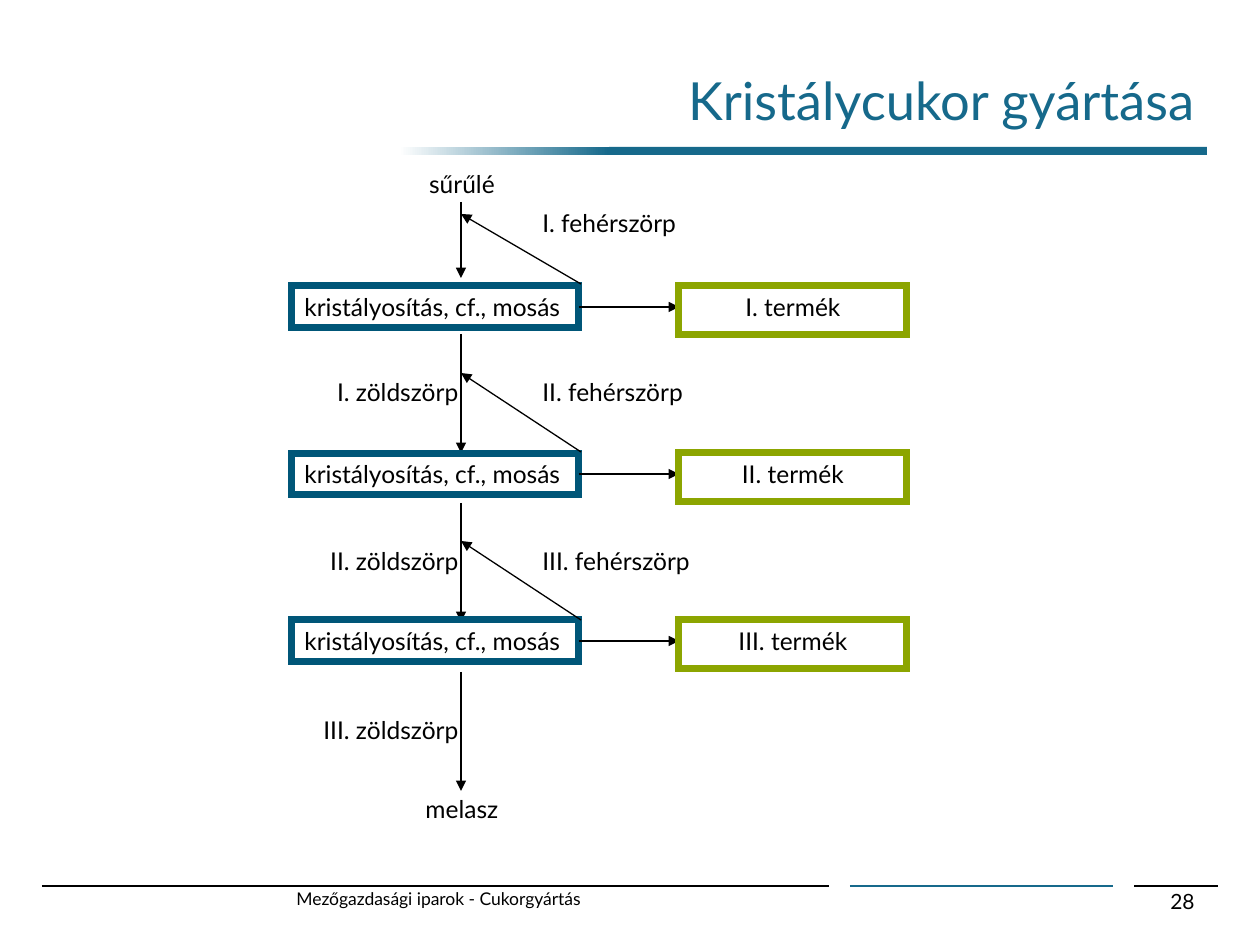
from lxml import etree
from pptx import Presentation
from pptx import util as u
from pptx.dml.color import RGBColor
from pptx.enum import shapes, text
from pptx.oxml.ns import qn

FONT = "Lato"
BLACK = RGBColor(0x00, 0x00, 0x00)
WHITE = RGBColor(0xFF, 0xFF, 0xFF)
TEAL = RGBColor(0x16, 0x69, 0x8B)
NAVY = RGBColor(0x00, 0x56, 0x78)
GREEN = RGBColor(0x8C, 0xA5, 0x00)
LEFT, CENTER, RIGHT = text.PP_ALIGN.LEFT, text.PP_ALIGN.CENTER, text.PP_ALIGN.RIGHT
NUMERALS = ["I.", "II.", "III."]


def px(n):
    """Lengths are in px, 126 to the inch."""
    return u.Emu(round(n * 914400 / 126))


def write(shape, words, size, align=LEFT, color=BLACK, anchor=text.MSO_ANCHOR.TOP):
    frame = shape.text_frame
    frame.text = words
    frame.word_wrap = True
    frame.vertical_anchor = anchor
    paragraph = frame.paragraphs[0]
    paragraph.alignment = align
    font = paragraph.runs[0].font
    font.name, font.size, font.color.rgb = FONT, u.Pt(size), color


def add_label(slide, x, y, w, h, words, size=14, align=LEFT):
    label = slide.shapes.add_textbox(px(x), px(y), px(w), px(h))
    write(label, words, size, align)


def add_line(slide, x1, y1, x2, y2, color=BLACK, width=0.75, arrow=True):
    line = slide.shapes.add_connector(
        shapes.MSO_CONNECTOR.STRAIGHT, px(x1), px(y1), px(x2), px(y2))
    line.line.color.rgb = color
    line.line.width = u.Pt(width)
    properties = line._element.spPr
    if arrow:
        etree.SubElement(properties.find(qn("a:ln")), qn("a:tailEnd"), type="triangle")
    etree.SubElement(properties, qn("a:effectLst"))
    return line


def add_box(slide, x, y, w, h, words, border, align):
    box = slide.shapes.add_shape(
        shapes.MSO_SHAPE.RECTANGLE, px(x), px(y), px(w), px(h))
    box.shadow.inherit = False
    box.fill.background()
    box.line.color.rgb = border
    box.line.width = u.Pt(4)
    etree.SubElement(box._element.spPr.find(qn("a:ln")), qn("a:miter"), lim="800000")
    write(box, words, 14, align)
    return box


def add_bar(slide, x, y, w, h, fade=False):
    bar = slide.shapes.add_shape(
        shapes.MSO_SHAPE.RECTANGLE, px(x), px(y), px(w), px(h))
    bar.shadow.inherit = False
    bar.line.fill.background()
    if fade:
        bar.fill.gradient()
        bar.fill.gradient_angle = 0
        for stop, color in zip(bar.fill.gradient_stops, (WHITE, TEAL)):
            stop.color.rgb = color
    else:
        bar.fill.solid()
        bar.fill.fore_color.rgb = TEAL


def add_header(slide, x, y, w, h):
    # Underline fading in from the left
    add_bar(slide, x + 53, y + 105, 210, 8, fade=True)
    add_bar(slide, x + 263, y + 105, w - 263, 8)
    title = slide.shapes.title
    title.left, title.top, title.width, title.height = px(x), px(y), px(w), px(h)
    write(title, "Kristálycukor gyártása", 30, RIGHT, TEAL, text.MSO_ANCHOR.MIDDLE)


def add_footer(slide, x, y):
    for start, end, color in ((0, 787, BLACK), (1092, 1176, BLACK), (808, 1071, TEAL)):
        add_line(slide, x + start, y, x + end, y, color, 1.5, arrow=False)
    add_label(slide, x + 242, y - 4, 588, 42, "Mezőgazdasági iparok - Cukorgyártás", 10)
    add_label(slide, x + 976, y - 4, 189, 42, "28", 12, RIGHT)


def add_stage(slide, x, y, numeral):
    """One crystallisation step, its product and the white syrup led back."""
    step = add_box(slide, x, y, 287, 42, "kristályosítás, cf., mosás", NAVY, LEFT)
    to_product = add_line(slide, x + 287, y + 21, x + 387, y + 21)
    to_product.begin_connect(step, 3)
    add_box(slide, x + 387, y, 228, 49, f"{numeral} termék", GREEN, CENTER)


def add_flow(slide, x, y):
    stem = x + 169
    add_label(slide, stem - 49, y, 100, 42, "sűrűlé", align=CENTER)
    add_line(slide, stem, y + 39, stem, y + 115)
    for i, numeral in enumerate(NUMERALS):
        add_stage(slide, x, y + 123 + 167 * i, numeral)
        # White syrup returns to the inflow above the step
        return_start = y + 121 + 168 * i
        rise = 70 if i == 0 else 79
        add_line(slide, x + 289, return_start, stem, return_start - rise)
        level = y + 39 + 169 * i
        add_label(slide, x + 238, level, 188, 43, f"{numeral} fehérszörp")
        # Green syrup goes on to the next step
        width = 179 + 18 * i
        add_label(slide, stem + 10 - width, level + 169, width, 43,
                  f"{numeral} zöldszörp", align=RIGHT)
        add_line(slide, stem, level + 132, stem, level + 251)
    add_label(slide, stem - 49, y + 625, 100, 42, "melasz", align=CENTER)


def main():
    deck = Presentation()
    deck.slide_width, deck.slide_height = px(1260), px(945)
    slide = deck.slides.add_slide(deck.slide_layouts[5])
    add_footer(slide, 42, 886)
    add_header(slide, 346, 42, 861, 116)
    add_flow(slide, 292, 163)
    deck.save("out.pptx")


if __name__ == "__main__":
    main()
